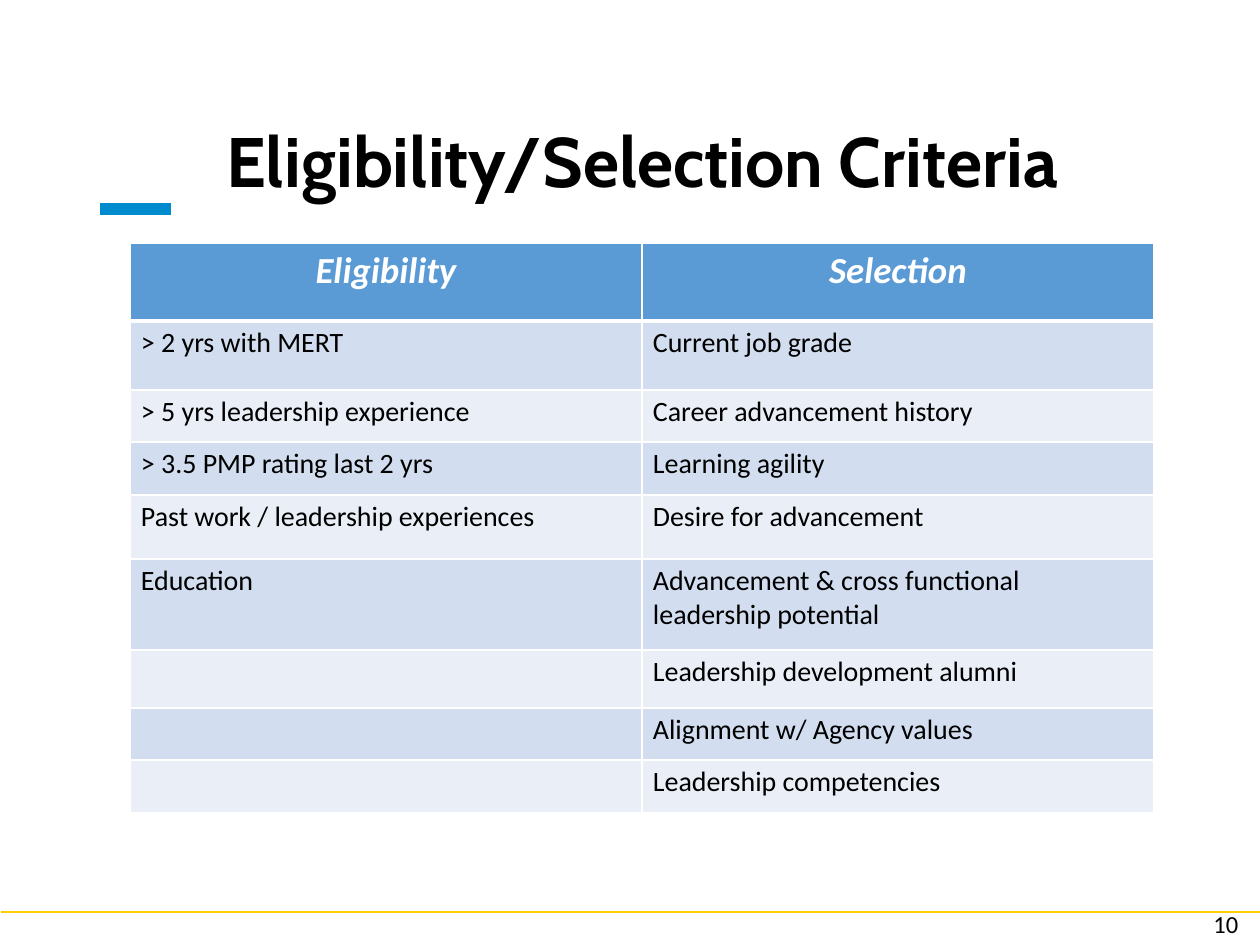
import pptx
import pptx.dml.color
import pptx.enum.text
import pptx.oxml
import pptx.oxml.ns
import pptx.util

PX = 914400 // 126
COLORS = {
    "text": "000000", "white": "FFFFFF", "header": "5B9BD5",
    "band_dark": "D2DEEF", "band_light": "EAEFF7",
    "accent": "008BCE", "footer": "FFCD00",
}
ALIGN = pptx.enum.text.PP_ALIGN


def rgb(name):
    return pptx.dml.color.RGBColor.from_string(COLORS[name])


def style(paragraph, size, color="text", name="Calibri", bold=False, italic=False):
    font = paragraph.font
    font.name, font.size = name, pptx.util.Pt(size)
    font.bold, font.italic = bold, italic
    font.color.rgb = rgb(color)


presentation = pptx.Presentation()
presentation.slide_width = 1260 * PX
presentation.slide_height = 945 * PX
slide = presentation.slides.add_slide(presentation.slide_layouts[6])

# Slide number
number = slide.shapes.add_textbox(1201 * PX, 903 * PX, 54 * PX, 43 * PX)
number.text_frame.word_wrap = False
number.text_frame.text = "10"
style(number.text_frame.paragraphs[0], 14)

# Footer rule and accent bar
for left, right, y, color, width in [
    (1, 1261, 912, "footer", 1),
    (100, 171, 209, "accent", 6.75),
]:
    line = slide.shapes.add_connector(
        pptx.enum.shapes.MSO_CONNECTOR.STRAIGHT, left * PX, y * PX, right * PX, y * PX)
    line.line.color.rgb = rgb(color)
    line.line.width = pptx.util.Pt(width)
    line._element.spPr.append(pptx.oxml.parse_xml(
        f'<a:effectLst {pptx.oxml.ns.nsdecls("a")}/>'))

# Title
title = slide.shapes.add_textbox(87 * PX, 11 * PX, 1110 * PX, 198 * PX)
title.text_frame.word_wrap = True
title.text_frame.vertical_anchor = pptx.enum.text.MSO_ANCHOR.BOTTOM
title.text_frame.text = "Eligibility/Selection Criteria"
paragraph = title.text_frame.paragraphs[0]
paragraph.alignment = ALIGN.CENTER
paragraph.line_spacing = 0.9
style(paragraph, 40, name="Cabin", bold=True)

# Criteria table: row height, eligibility, selection
rows = [
    (78, "Eligibility", "Selection"),
    (69, "> 2 yrs with MERT", "Current job grade"),
    (52, "> 5 yrs leadership experience", "Career advancement history"),
    (53, "> 3.5 PMP rating last 2 yrs", "Learning agility"),
    (64, "Past work / leadership experiences", "Desire for advancement"),
    (91, "Education", "Advancement & cross functional leadership potential"),
    (58, "", "Leadership development alumni"),
    (52, "", "Alignment w/ Agency values"),
    (53, "", "Leadership competencies"),
]
height = sum(row[0] for row in rows)
table = slide.shapes.add_table(
    len(rows), 2, 130 * PX, 243 * PX, 1024 * PX, height * PX).table
for column in table.columns:
    column.width = 512 * PX

for row_index, (row_height, *texts) in enumerate(rows):
    table.rows[row_index].height = row_height * PX
    is_header = row_index == 0
    fill = "header" if is_header else ("band_light", "band_dark")[row_index % 2]
    for column_index, text in enumerate(texts):
        cell = table.cell(row_index, column_index)
        cell.margin_left = cell.margin_right = 11 * PX
        cell.margin_top = cell.margin_bottom = 5 * PX
        cell.text = text
        paragraph = cell.text_frame.paragraphs[0]
        if is_header:
            paragraph.alignment = ALIGN.CENTER
            style(paragraph, 21, "white", bold=True, italic=True)
        else:
            style(paragraph, 16)

        # White borders, thicker below the header
        properties = cell._tc.get_or_add_tcPr()
        for side in ("lnL", "lnR", "lnT", "lnB"):
            thick = (row_index, side) in [(0, "lnB"), (1, "lnT")]
            width = pptx.util.Pt(3 if thick else 1)
            properties.append(pptx.oxml.parse_xml(
                f'<a:{side} {pptx.oxml.ns.nsdecls("a")} w="{width}"><a:solidFill>'
                f'<a:srgbClr val="{COLORS["white"]}"/></a:solidFill></a:{side}>'))
        cell.fill.solid()
        cell.fill.fore_color.rgb = rgb(fill)

presentation.save("out.pptx")
